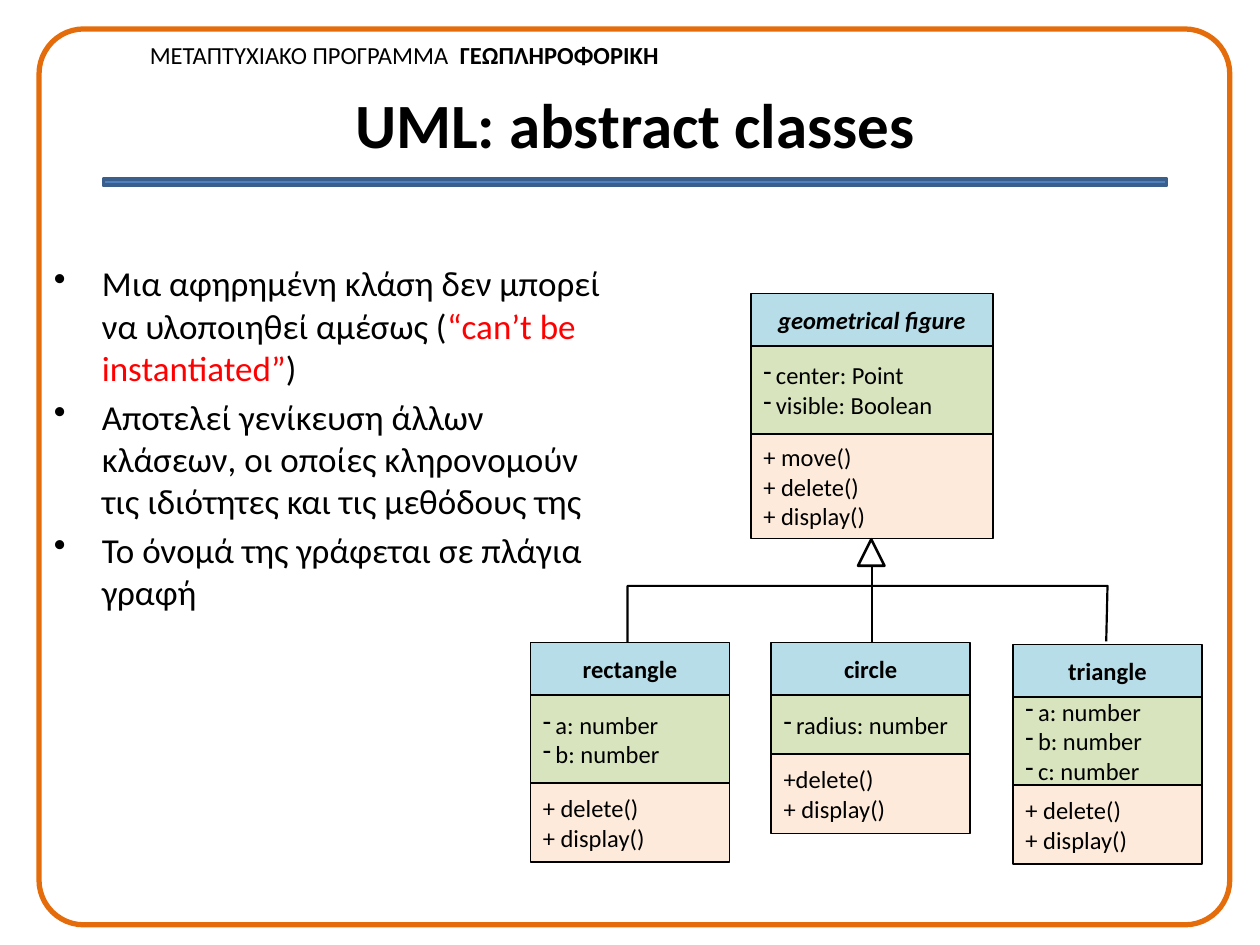
from dataclasses import dataclass

from lxml import etree
from pptx import Presentation
from pptx.dml.color import RGBColor
from pptx.enum.shapes import MSO_CONNECTOR, MSO_SHAPE
from pptx.enum.text import MSO_ANCHOR, PP_ALIGN
from pptx.oxml.ns import qn
from pptx.util import Inches, Pt

RECT, ROUND = MSO_SHAPE.RECTANGLE, MSO_SHAPE.ROUNDED_RECTANGLE
TRIANGLE, STRAIGHT = MSO_SHAPE.ISOSCELES_TRIANGLE, MSO_CONNECTOR.STRAIGHT
LEFT, CENTER = PP_ALIGN.LEFT, PP_ALIGN.CENTER
TOP, MIDDLE = MSO_ANCHOR.TOP, MSO_ANCHOR.MIDDLE

FONT, BLACK, RED = "Calibri", "000000", "FF0000"
NAME_FILL, ATTR_FILL, METHOD_FILL = "B7DEE8", "D7E4BD", "FDEADA"
NAME_H = 4.15
COLS, ROWS = 100, 75  # grid of the 10 by 7.5 inch slide

prs = Presentation()
prs.slide_width, prs.slide_height = Inches(10), Inches(7.5)
s = prs.slides.add_slide(prs.slide_layouts[5])


@dataclass
class Box:
    """Place on the grid, in columns and rows."""
    x: float
    y: float
    w: float
    h: float

    def emu(self) -> tuple:
        return gx(self.x), gy(self.y), gx(self.w), gy(self.h)


@dataclass
class UmlClass:
    name: str
    x: float
    y: float
    w: float
    attributes: list
    methods: list
    abstract: bool = False


def gx(cols: float) -> int:
    return round(prs.slide_width * cols / COLS)


def gy(rows: float) -> int:
    return round(prs.slide_height * rows / ROWS)


def rgb(value: str) -> RGBColor:
    return RGBColor.from_string(value)


def style(sp, fill: str | None, line: str, width: float) -> None:
    sp.shadow.inherit = False
    if fill:
        sp.fill.solid()
        sp.fill.fore_color.rgb = rgb(fill)
    else:
        sp.fill.background()
    sp.line.color.rgb = rgb(line)
    sp.line.width = Pt(width)


def add_shape(kind, box: Box, fill: str | None, line: str, width: float):
    sp = s.shapes.add_shape(kind, *box.emu())
    style(sp, fill, line, width)
    return sp


def add_run(p, text: str, size: float, color: str = BLACK, **formats) -> None:
    r = p.add_run()
    r.text = text
    values = {"name": FONT, "size": Pt(size), **formats}
    for key, value in values.items():
        setattr(r.font, key, value)
    r.font.color.rgb = rgb(color)


def add_bullet(p, char: str, indent: float) -> None:
    pPr = p._p.get_or_add_pPr()
    pPr.set("marL", str(Inches(indent)))
    pPr.set("indent", str(-Inches(indent)))
    etree.SubElement(pPr, qn("a:buChar")).set("char", char)


def paragraphs(tf, count: int) -> list:
    return [tf.paragraphs[0]] + [tf.add_paragraph() for _ in range(count - 1)]


def compartment(box: Box, fill: str, lines: list, align=LEFT,
                bullet: str = "", **formats) -> None:
    tf = add_shape(RECT, box, fill, BLACK, 1).text_frame
    tf.word_wrap, tf.vertical_anchor = True, MIDDLE
    for p, text in zip(paragraphs(tf, len(lines)), lines):
        if bullet:
            add_bullet(p, bullet, 0.1)
        p.alignment = align
        add_run(p, text, 14, **formats)


def draw_class(c: UmlClass) -> None:
    attr_h = 2.4 + 2.3 * min(len(c.attributes), 2)
    method_h = 2.3 + 2 * len(c.methods)
    attr_y = c.y + NAME_H
    compartment(Box(c.x, attr_y, c.w, attr_h), ATTR_FILL, c.attributes, bullet="-")
    compartment(Box(c.x, c.y, c.w, NAME_H), NAME_FILL, [c.name], CENTER,
                bold=True, italic=c.abstract)
    compartment(Box(c.x, attr_y + attr_h, c.w, method_h), METHOD_FILL, c.methods)


# Frame, header and rule under the title
add_shape(RECT, Box(8.2, 14.2, 84.4, 0.5), "4F81BD", "3A5F8C", 2)
frame = add_shape(ROUND, Box(3.1, 2.3, 94.5, 71.1), None, "E46C0A", 3)
frame.adjustments[0] = 0.05

header = s.shapes.add_textbox(*Box(10.9, 2.7, 42.8, 3.4).emu()).text_frame
header.word_wrap = False
add_run(header.paragraphs[0], "ΜΕΤΑΠΤΥΧΙΑΚΟ ΠΡΟΓΡΑΜΜΑ  ", 14)
add_run(header.paragraphs[0], "ΓΕΩΠΛΗΡΟΦΟΡΙΚΗ", 14, bold=True)

# Title
title = s.shapes.title
title.left, title.top, title.width, title.height = Box(5.4, 5, 90, 9.5).emu()
title.text_frame.vertical_anchor = MIDDLE
title.text_frame.paragraphs[0].alignment = CENTER
add_run(title.text_frame.paragraphs[0], "UML: abstract classes", 36, bold=True)

# Bullet points, each a list of (text, colour)
POINTS = [
    [("Μια αφηρημένη κλάση δεν μπορεί να υλοποιηθεί αμέσως (", BLACK),
     ("“can’t be instantiated”", RED), (")", BLACK)],
    [("Αποτελεί γενίκευση άλλων κλάσεων, οι οποίες κληρονομούν "
      "τις ιδιότητες και τις μεθόδους της", BLACK)],
    [("Το όνομά της γράφεται σε πλάγια γραφή", BLACK)],
]
tf = s.shapes.add_textbox(*Box(3.3, 20.3, 45.8, 32.5).emu()).text_frame
tf.word_wrap, tf.vertical_anchor = True, TOP
for i, (p, point) in enumerate(zip(paragraphs(tf, len(POINTS)), POINTS)):
    add_bullet(p, "•", 0.38)
    if i:
        p.space_before = Pt(4)
    for text, color in point:
        add_run(p, text, 20, color)

# Class diagram
SHARED = ["+ delete()", "+ display()"]
CLASSES = [
    UmlClass("geometrical figure", 59.6, 23.3, 19.2,
             ["center: Point", "visible: Boolean"], ["+ move()", *SHARED], True),
    UmlClass("rectangle", 42.1, 51, 15.8, ["a: number", "b: number"], SHARED),
    UmlClass("circle", 61.2, 51, 15.8, ["radius: number"],
             ["+delete()", "+ display()"]),
    UmlClass("triangle", 80.4, 51.15, 15,
             ["a: number", "b: number", "c: number"], SHARED),
]
for c in CLASSES:
    draw_class(c)

# Generalization arrow and branches
add_shape(TRIANGLE, Box(68.1, 42.8, 2.1, 2.1), None, BLACK, 1.5)
stem = s.shapes.add_connector(STRAIGHT, gx(69.2), gy(44.9), gx(69.2), gy(51))
stem.line.color.rgb = rgb(BLACK)
stem.line.width = Pt(1.25)
etree.SubElement(stem._element.spPr, qn("a:effectLst"))

BRANCH = [(49.8, 51), (49.8, 46.5), (87.9, 46.5), (87.8, 50.9)]
start, *rest = [(gx(x), gy(y)) for x, y in BRANCH]
builder = s.shapes.build_freeform(*start)
builder.add_line_segments(rest, close=False)
style(builder.convert_to_shape(), None, BLACK, 1.25)

prs.save("out.pptx")
